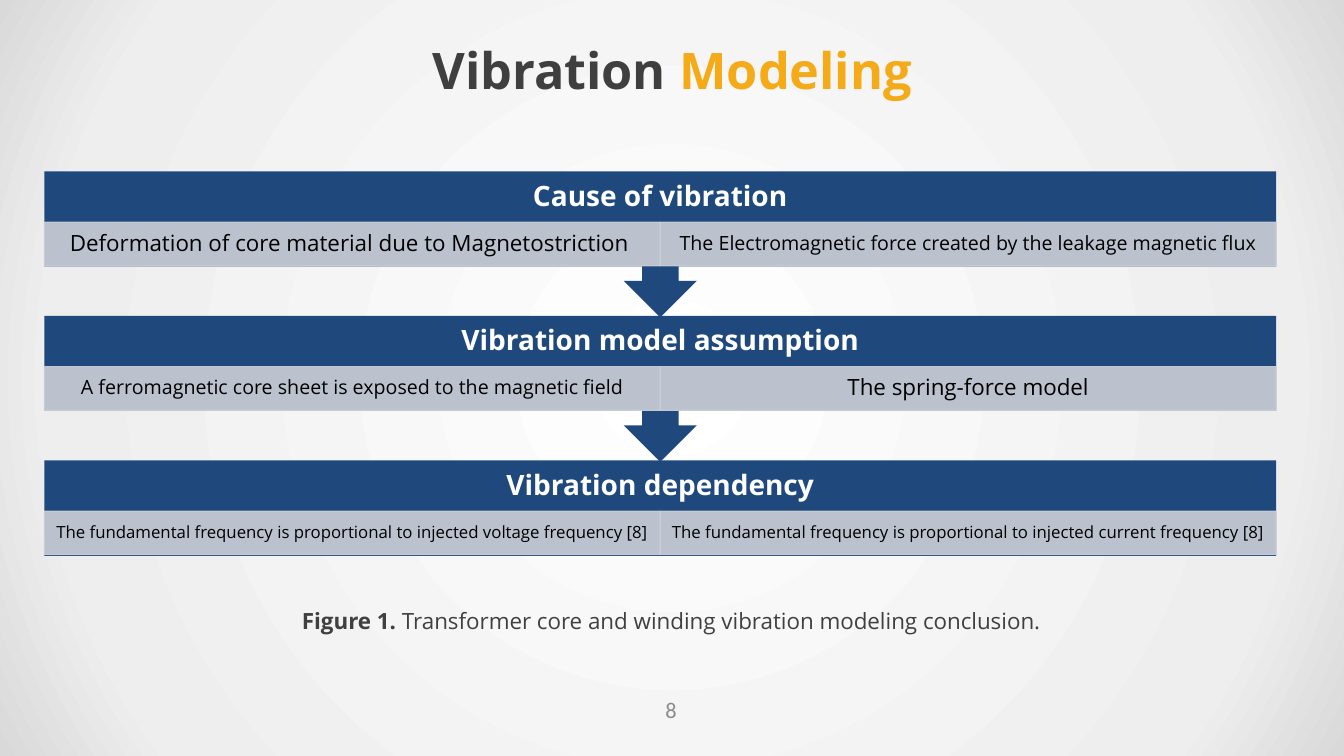
"""Build the Vibration Modeling slide: three stages linked by arrow callouts."""
from lxml.etree import SubElement
from pptx import Presentation
from pptx.dml.color import RGBColor
from pptx.enum.shapes import MSO_SHAPE
from pptx.enum.text import MSO_ANCHOR, MSO_AUTO_SIZE, PP_ALIGN
from pptx.oxml import parse_xml
from pptx.oxml.ns import nsdecls, qn
from pptx.util import Cm, Pt

CENTER = PP_ALIGN.CENTER
MIDDLE = MSO_ANCHOR.MIDDLE
NO_AUTOFIT = MSO_AUTO_SIZE.NONE
RECTANGLE = MSO_SHAPE.RECTANGLE
CALLOUT = MSO_SHAPE.DOWN_ARROW_CALLOUT
TITLE_ONLY = 5
HEADING_FONT = "Open Sans"
NUMBER_FONT = "Calibri"
COLORS = {
    "title": "3F3F3F",
    "accent": "F4AB17",
    "number": "8C8C8C",
    "caption": "404040",
    "stage": "1F497D",
    "detail": "CDD0D7",
    "white": "FFFFFF",
    "black": "000000",
    "middle": "EEEEEE",
    "edge": "D9D9D9",
}
STAGES = [
    ("Cause of vibration", [
        ("Deformation of core material due to Magnetostriction ", 16),
        ("The Electromagnetic force created by the leakage magnetic flux", 14)]),
    ("Vibration model assumption", [
        ("A ferromagnetic core sheet is exposed to the magnetic field", 14),
        ("The spring-force model", 16)]),
    ("Vibration dependency", [
        ("The fundamental frequency is proportional to injected voltage frequency [8]", 12),
        ("The fundamental frequency is proportional to injected current frequency [8]", 12)]),
]
LEFT, TOP, STEP = 1.12, 4.32, 3.64
STAGE_WIDTH, CALLOUT_HEIGHT, BLOCK_HEIGHT = 31.04, 3.68, 2.41
DETAIL_OFFSET, DETAIL_WIDTH, DETAIL_HEIGHT = 1.28, STAGE_WIDTH / 2, 1.1


def write_text(shape, runs, size, font=HEADING_FONT, margins=(0.33, 0.18, 0.33, 0.18)):
    """Write one centred paragraph of (text, colour, bold) runs."""
    frame = shape.text_frame
    frame.word_wrap = True
    frame.auto_size = NO_AUTOFIT
    frame.vertical_anchor = MIDDLE
    frame.margin_left, frame.margin_top, frame.margin_right, frame.margin_bottom = map(Cm, margins)
    paragraph = frame.paragraphs[0]
    paragraph.alignment = CENTER
    for text, color, bold in runs:
        run = paragraph.add_run()
        run.text = text
        run.font.name = font
        run.font.size = Pt(size)
        run.font.bold = bold
        run.font.color.rgb = RGBColor.from_string(COLORS[color])
    return paragraph


def add_block(slide, kind, left, top, width, height, color):
    """Add a filled shape without shadow or outline."""
    shape = slide.shapes.add_shape(kind, Cm(left), Cm(top), Cm(width), Cm(height))
    shape.shadow.inherit = False
    shape.fill.solid()
    shape.fill.fore_color.rgb = RGBColor.from_string(COLORS[color])
    shape.line.fill.background()
    return shape


presentation = Presentation()
presentation.slide_width = Cm(33.87)
presentation.slide_height = Cm(19.05)
slide = presentation.slides.add_slide(presentation.slide_layouts[TITLE_ONLY])

stops = "".join(
    f'<a:gs pos="{position}"><a:srgbClr val="{COLORS[name]}"/></a:gs>'
    for position, name in [(0, "white"), (81000, "middle"), (100000, "edge")])
background = parse_xml(
    f'<p:bg {nsdecls("p", "a")}><p:bgPr><a:gradFill rotWithShape="1"><a:gsLst>{stops}</a:gsLst>'
    '<a:path path="circle"><a:fillToRect l="50000" t="50000" r="50000" b="50000"/></a:path>'
    '</a:gradFill><a:effectLst/></p:bgPr></p:bg>')
slide._element.cSld.insert(0, background)

title = slide.shapes.title
title.left, title.top, title.width, title.height = Cm(1.7), Cm(0.76), Cm(30.48), Cm(1.98)
write_text(title, [("Vibration ", "title", True), ("Modeling", "accent", True)], 36)

number = slide.shapes.add_textbox(Cm(16.2), Cm(17.35), Cm(1.42), Cm(1.07))
write_text(number, [("8", "number", False)], 16, NUMBER_FONT)

for index, (heading, details) in enumerate(STAGES):
    top = TOP + index * STEP
    is_last = index == len(STAGES) - 1
    kind, height = (RECTANGLE, BLOCK_HEIGHT) if is_last else (CALLOUT, CALLOUT_HEIGHT)
    stage = add_block(slide, kind, LEFT, top, STAGE_WIDTH, height, "stage")
    paragraph = write_text(stage, [(heading, "white", True)], 20, margins=(0.4, 0, 0.4, 1.1))
    paragraph.line_spacing = 0.9
    for column, (text, size) in enumerate(details):
        detail = add_block(slide, RECTANGLE, LEFT + column * DETAIL_WIDTH, top + DETAIL_OFFSET,
                           DETAIL_WIDTH, DETAIL_HEIGHT, "detail")
        detail.line.color.rgb = RGBColor.from_string(COLORS["detail"])
        detail.line.width = Pt(0.75)
        for color in detail._element.spPr.iter(qn("a:srgbClr")):
            SubElement(color, qn("a:alpha"), val="90000")
        paragraph = write_text(detail, [(text, "black", False)], size,
                               margins=(0.23, 0.05, 0.23, 0.05))
        paragraph.line_spacing = 0.9

caption = slide.shapes.add_textbox(Cm(4.22), Cm(15.16), Cm(25.4), Cm(0.94))
write_text(caption, [
    ("Figure 1. ", "caption", True),
    ("Transformer core and winding vibration modeling conclusion.", "caption", False)],
    16, margins=(0.25, 0.13, 0.25, 0.13))

presentation.save("out.pptx")
